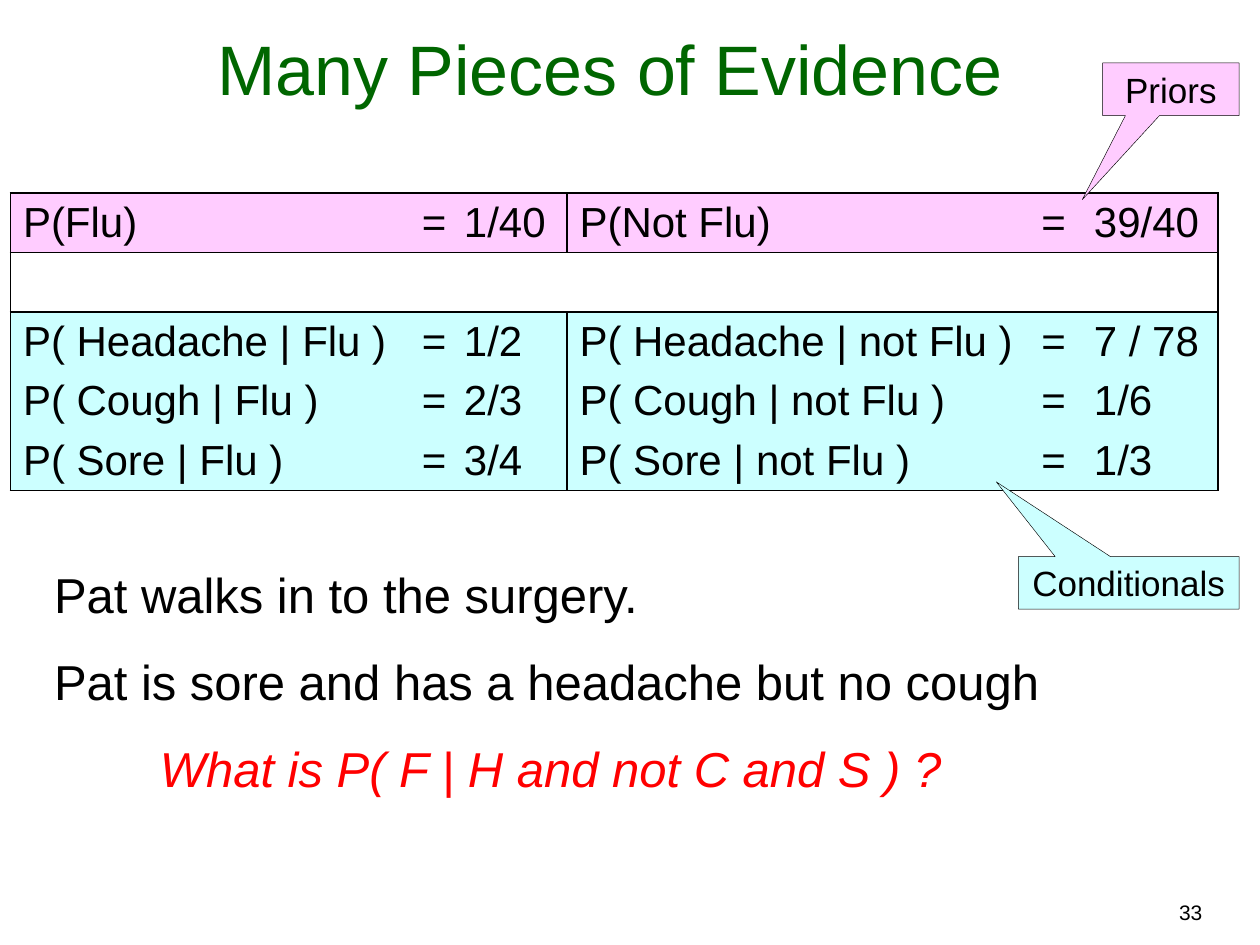
from lxml.etree import SubElement
from pptx import Presentation
from pptx.dml.color import RGBColor
from pptx.enum.shapes import MSO_SHAPE
from pptx.enum.text import MSO_ANCHOR, PP_ALIGN
from pptx.oxml.ns import qn
from pptx.util import Cm, Pt

COLORS = {"text": "000000", "title": "006600", "question": "FF0000",
          "priors": "FFCCFF", "conditionals": "CCFFFF"}


def format_paragraph(paragraph, size, color="text", alignment=PP_ALIGN.LEFT):
    paragraph.alignment = alignment
    for run in paragraph.runs:
        run.font.name = "Arial"
        run.font.size = Pt(size)
        run.font.color.rgb = RGBColor.from_string(COLORS[color])


def set_borders(cell, **visible):
    properties = cell._tc.get_or_add_tcPr()
    for side in ("L", "R", "T", "B"):
        line = SubElement(properties, qn(f"a:ln{side}"), w=str(Pt(1)))
        if visible[side]:
            fill = SubElement(line, qn("a:solidFill"))
            SubElement(fill, qn("a:srgbClr"), val=COLORS["text"])
        else:
            SubElement(line, qn("a:noFill"))


presentation = Presentation()
presentation.slide_width, presentation.slide_height = Cm(25.4), Cm(19.05)
slide = presentation.slides.add_slide(presentation.slide_layouts[5])

# Title
title = slide.shapes.title
title.left, title.top, title.width, title.height = Cm(0.64), Cm(0.64), Cm(23.7), Cm(1.7)
title.text_frame.text = "Many Pieces of Evidence "
title.text_frame.vertical_anchor = MSO_ANCHOR.BOTTOM
format_paragraph(title.text_frame.paragraphs[0], 40, "title", PP_ALIGN.CENTER)

# Probability table: priors, an empty band, conditionals
rows = [
    ("priors", ["P(Flu)", "=", "1/40", "P(Not Flu)", "=", "39/40"]),
    (None, [""] * 6),
    ("conditionals", ["P( Headache | Flu )", "=", "1/2", "P( Headache | not Flu )", "=", "7 / 78"]),
    ("conditionals", ["P( Cough | Flu )", "=", "2/3", "P( Cough | not Flu )", "=", "1/6"]),
    ("conditionals", ["P( Sore | Flu )", "=", "3/4", "P( Sore | not Flu )", "=", "1/3"]),
]
column_widths = [8.04, 0.85, 2.33, 9.31, 1.06, 2.75]
row_height = 1.2
frame = slide.shapes.add_table(len(rows), len(column_widths), Cm(0.21), Cm(3.89),
                               Cm(sum(column_widths)), Cm(row_height * len(rows)))
table = frame.table
table.first_row = table.horz_banding = False
for column, width in zip(table.columns, column_widths):
    column.width = Cm(width)
table.cell(1, 0).merge(table.cell(1, 5))

for row_index, (group, texts) in enumerate(rows):
    table.rows[row_index].height = Cm(row_height)
    for column_index, text in enumerate(texts):
        cell = table.cell(row_index, column_index)
        set_borders(cell,
                    L=column_index == 0 or (group and column_index == 3),
                    R=column_index == 5 or column_index == 2 and group or cell.is_merge_origin,
                    T=row_index <= 2, B=row_index in (0, 1, 4))
        cell.margin_top = cell.margin_bottom = Cm(0.1)
        # The narrow "=" columns need the room to the right of the sign
        cell.margin_right = Cm(0)
        cell.vertical_anchor = MSO_ANCHOR.MIDDLE
        if group:
            cell.fill.solid()
            cell.fill.fore_color.rgb = RGBColor.from_string(COLORS[group])
            cell.text_frame.text = text
            format_paragraph(cell.text_frame.paragraphs[0], 24)
        else:
            cell.fill.background()

# Story and question
story = slide.shapes.add_textbox(Cm(0.84), Cm(11.23), Cm(20.52), Cm(5)).text_frame
story.word_wrap = True
story.vertical_anchor = MSO_ANCHOR.MIDDLE
story.text = ("Pat walks in to the surgery.\n"
              "Pat is sore and has a headache but no cough\n"
              "What is P( F | H and not C and S ) ?")
for paragraph in story.paragraphs:
    format_paragraph(paragraph, 28)
for paragraph in story.paragraphs[1:]:
    paragraph.space_before = Pt(16)
question = story.paragraphs[2]
format_paragraph(question, 28, "question", PP_ALIGN.CENTER)
question.runs[0].font.italic = True

# Callouts pointing at the table
callouts = [
    ("Priors", "priors", 22.23, 1.27, 2.75, (-0.65, 2.1)),
    ("Conditionals", "conditionals", 20.53, 11.22, 4.45, (-0.6, -1.92)),
]
for text, color, left, top, width, tip in callouts:
    callout = slide.shapes.add_shape(MSO_SHAPE.RECTANGULAR_CALLOUT,
                                     Cm(left), Cm(top), Cm(width), Cm(1.06))
    callout.adjustments[0], callout.adjustments[1] = tip
    callout.shadow.inherit = False
    callout.fill.solid()
    callout.fill.fore_color.rgb = RGBColor.from_string(COLORS[color])
    callout.line.color.rgb = RGBColor.from_string(COLORS["text"])
    callout.line.width = Pt(0.25)
    callout.text_frame.text = text
    callout.text_frame.word_wrap = False
    callout.text_frame.vertical_anchor = MSO_ANCHOR.MIDDLE
    format_paragraph(callout.text_frame.paragraphs[0], 20, alignment=PP_ALIGN.CENTER)

# Slide number
number = slide.shapes.add_textbox(Cm(14.53), Cm(18.01), Cm(9.96), Cm(0.76)).text_frame
number.word_wrap = True
number.text = "33"
format_paragraph(number.paragraphs[0], 12, alignment=PP_ALIGN.RIGHT)

presentation.save("out.pptx")
